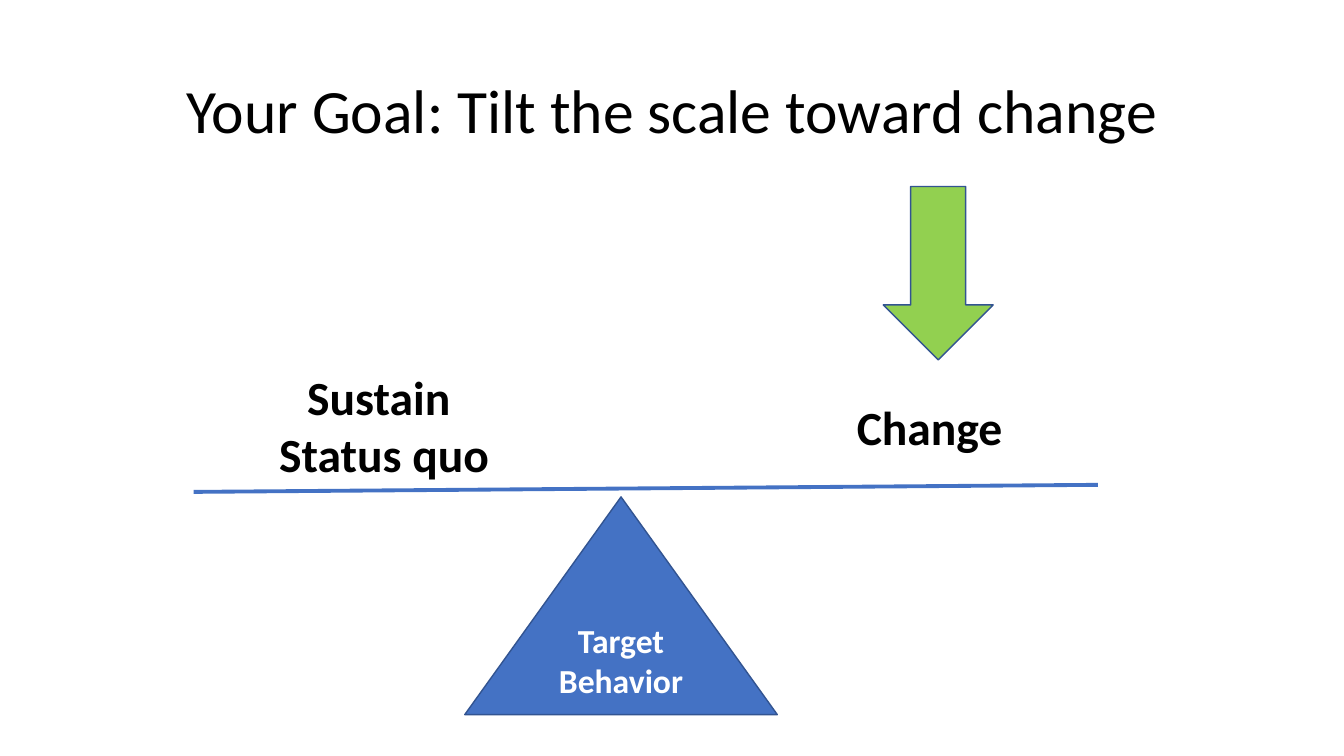
from pptx import Presentation
from pptx import util as u
from pptx.dml.color import RGBColor
from pptx.enum import shapes, text
from pptx.oxml.ns import qn
from lxml import etree

PX = 9144  # EMU per px, 100 px to the inch
FONT = "Calibri"
BLACK = RGBColor(0x00, 0x00, 0x00)
WHITE = RGBColor(0xFF, 0xFF, 0xFF)
BLUE = RGBColor(0x44, 0x72, 0xC4)
DARK_BLUE = RGBColor(0x32, 0x54, 0x91)
GREEN = RGBColor(0x92, 0xD0, 0x50)


def px(*lengths):
    return [u.Emu(n * PX) for n in lengths]


def write(tf, lines, size, color=BLACK, bold=True):
    """Fill a text frame with centred paragraphs, one per line."""
    tf.word_wrap = True
    for i, line in enumerate(lines):
        p = tf.add_paragraph() if i else tf.paragraphs[0]
        p.text = line
        p.alignment = text.PP_ALIGN.CENTER
        p.font.name = FONT
        p.font.size = u.Pt(size)
        p.font.bold = bold
        p.font.color.rgb = color


def set_title(s, words, box):
    sp = s.shapes.title
    sp.left, sp.top, sp.width, sp.height = px(*box)
    tf = sp.text_frame
    write(tf, [words], 44, bold=False)
    tf.vertical_anchor = text.MSO_ANCHOR.MIDDLE
    tf.paragraphs[0].line_spacing = 0.9


def add_label(s, lines, box):
    tf = s.shapes.add_textbox(*px(*box)).text_frame
    write(tf, lines, 34)
    tf.auto_size = text.MSO_AUTO_SIZE.SHAPE_TO_FIT_TEXT


def add_figure(s, kind, box, fill):
    sp = s.shapes.add_shape(kind, *px(*box))
    sp.shadow.inherit = False
    sp.fill.solid()
    sp.fill.fore_color.rgb = fill
    sp.line.color.rgb = DARK_BLUE
    sp.line.width = u.Pt(1)
    return sp


def add_beam(s, ends):
    beam = s.shapes.add_connector(shapes.MSO_CONNECTOR.STRAIGHT, *px(*ends))
    beam.line.color.rgb = BLUE
    beam.line.width = u.Pt(2.75)
    etree.SubElement(beam._element.spPr, qn("a:effectLst"))


def main():
    prs = Presentation()
    prs.slide_width, prs.slide_height = px(1333, 750)
    s = prs.slides.add_slide(prs.slide_layouts[5])

    set_title(s, "Your Goal: Tilt the scale toward change", (92, 40, 1150, 145))
    add_label(s, ["Change"], (771, 390, 302, 67))
    add_label(s, ["Sustain ", "Status quo"], (230, 360, 302, 125))
    pivot = add_figure(s, shapes.MSO_SHAPE.ISOSCELES_TRIANGLE, (461, 493, 310, 216), BLUE)
    write(pivot.text_frame, ["Target Behavior"], 24, WHITE)
    pivot.text_frame.vertical_anchor = text.MSO_ANCHOR.MIDDLE
    add_beam(s, (192, 488, 1089, 481))
    add_figure(s, shapes.MSO_SHAPE.DOWN_ARROW, (876, 185, 109, 172), GREEN)

    prs.save("out.pptx")


if __name__ == "__main__":
    main()
